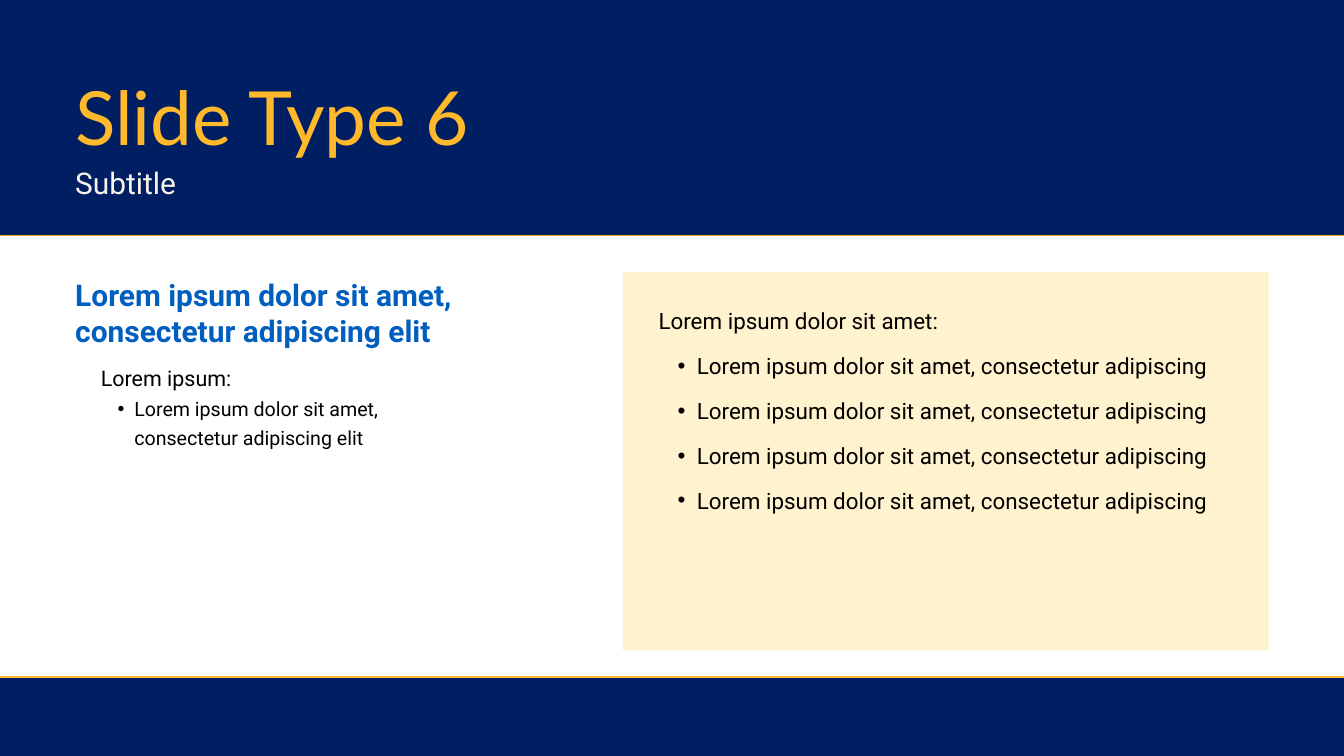
from lxml import etree
from pptx import Presentation
from pptx.enum import shapes, text
from pptx.oxml import ns
from pptx.util import Inches, Pt

# Grid: 200 columns by 112.5 rows of square cells
COLS, ROWS = 200, 112.5
CELL = Inches(20) / COLS
EDGE = 11.2
HEAD, FOOT = 35, 100.9
INK = {
    "navy": "001F63",
    "gold": "FFB92A",
    "cream": "FFF2CE",
    "blue": "005FBE",
    "pale": "F8F4EB",
    "black": "000000",
}
LOREM = "Lorem ipsum dolor sit amet"
LONG = LOREM + ", consectetur adipiscing"


def grid(*cells):
    return [round(n * CELL) for n in cells]


def tint(color, name):
    color.rgb = color.rgb.from_string(INK[name]) if color.type else None


def paint(fill, name):
    fill.solid()
    fill.fore_color.rgb = hue(name)


def hue(name):
    from pptx.dml.color import RGBColor
    return RGBColor.from_string(INK[name])


def rule(slide, row):
    x, y, end = grid(0, row, COLS)
    line = slide.shapes.add_connector(shapes.MSO_CONNECTOR.STRAIGHT, x, y, end, y)
    line.line.color.rgb = hue("gold")
    line.line.width = Pt(2.25)
    etree.SubElement(line._element.spPr, ns.qn("a:effectLst"))


def block(slide, box, name):
    rect = slide.shapes.add_shape(shapes.MSO_SHAPE.RECTANGLE, *grid(*box))
    rect.shadow.inherit = False
    paint(rect.fill, name)
    rect.line.fill.background()


def write(slide, box, lines, name, face="Roboto", bold=False):
    """Each line is (words, size, line pitch, bullet indent in cells)."""
    frame = slide.shapes.add_textbox(*grid(*box)).text_frame
    frame.word_wrap = True
    frame.margin_left = frame.margin_right = 0
    frame.margin_top = frame.margin_bottom = 0
    frame.text = "\n".join(line[0] for line in lines)
    for para, (_, size, pitch, dent) in zip(frame.paragraphs, lines):
        para.line_spacing = Pt(pitch)
        font = para.runs[0].font
        font.name, font.size, font.bold = face, Pt(size), bold
        font.color.rgb = hue(name)
        if dent:
            bullet(para, dent)
    return frame


def bullet(para, dent):
    para.level = 1
    props = para._p.get_or_add_pPr()
    left, hang = grid(dent, dent / 2)
    props.set("marL", str(left))
    props.set("indent", str(-hang))
    etree.SubElement(props, ns.qn("a:buFont"), typeface="Arial")
    etree.SubElement(props, ns.qn("a:buChar"), char="•")


def header(slide, box):
    x, y, wide, high = box
    block(slide, box, "navy")
    write(slide, (x + EDGE, y + 11.6, 119.1, 14.3),
          [("Slide Type 6", 80, 88, 0)], "gold", "Lato")
    frame = write(slide, (x + EDGE, y + 24.5, wide - 2 * EDGE, 5.4),
                  [("Subtitle", 32, 38.4, 0)], "pale")
    frame.paragraphs[0].alignment = text.PP_ALIGN.JUSTIFY


def notes(slide, box):
    x, y, wide, high = box
    write(slide, (x, y, wide, 10.7), [(LONG + " elit", 32, 38.4, 0)],
          "blue", bold=True)
    write(slide, (x + 3.8, y + 12.2, 55.8, 13.4),
          [("Lorem ipsum:", 23, 34.5, 0), (LONG + " elit", 21, 31.5, 5)],
          "black")


def panel(slide, box):
    x, y, wide, high = box
    block(slide, box, "cream")
    lines = [(LOREM + ":", 24, 48, 0)] + [(LONG, 24, 48, 5.7)] * 4
    write(slide, (x + 5.3, y + 2.6, 85.4, 32.7), lines, "black")


def main():
    deck = Presentation()
    deck.slide_width, deck.slide_height = grid(COLS, ROWS)
    slide = deck.slides.add_slide(deck.slide_layouts[6])
    paint(slide.background.fill, "pale")
    slide.background.fill.fore_color.rgb = hue("pale").from_string("FFFFFF")

    # Gold rules lie behind the bands
    for row in (FOOT, HEAD, FOOT - 0.1):
        rule(slide, row)

    # Bands and content
    header(slide, (0, 0, COLS, HEAD))
    block(slide, (0, FOOT, COLS, ROWS - FOOT), "navy")
    notes(slide, (EDGE, 41.2, 69.6, 25.6))
    panel(slide, (92.7, 40.5, 96.1, 56.3))
    deck.save("out.pptx")


if __name__ == "__main__":
    main()
